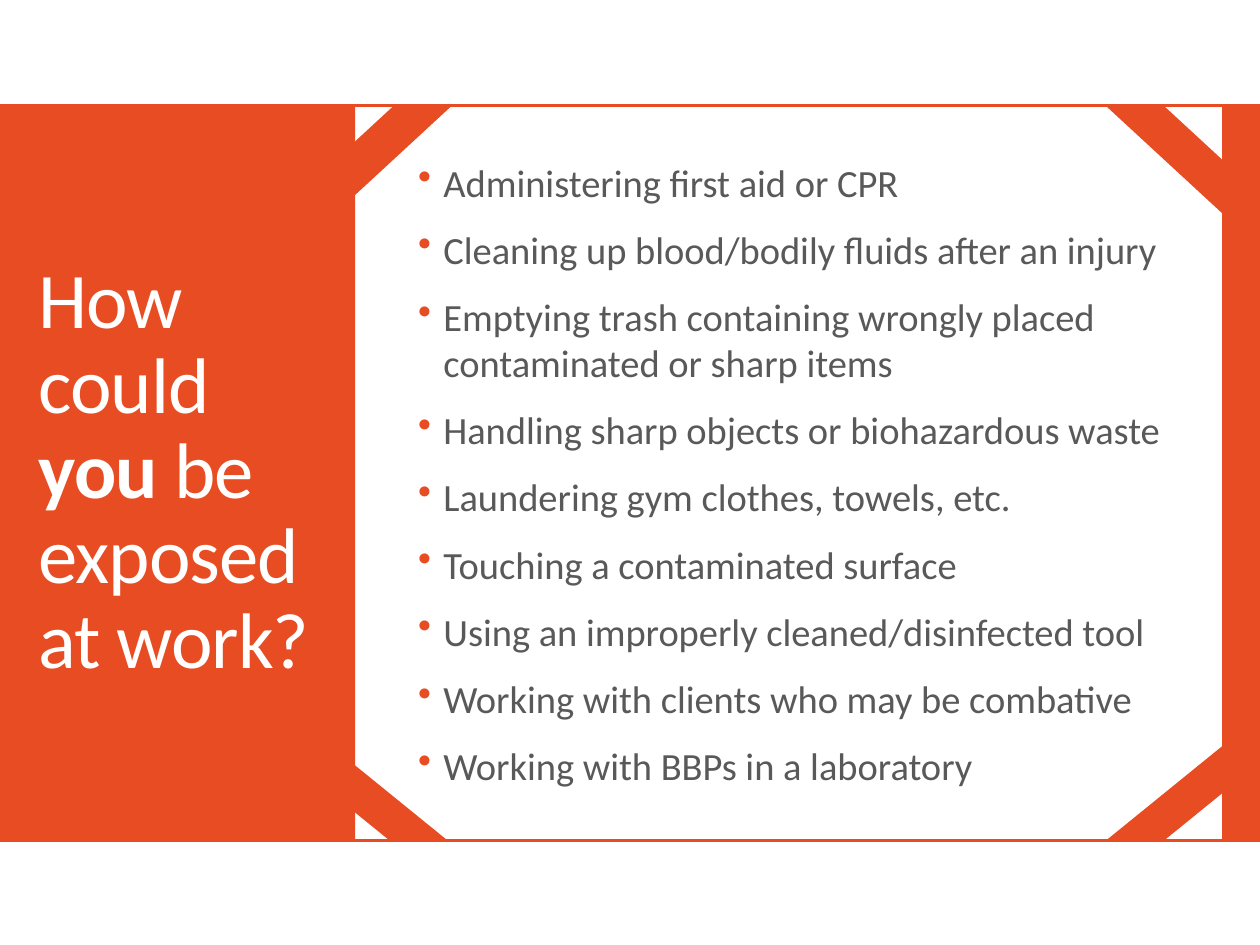
from dataclasses import dataclass

from lxml import etree
from pptx import Presentation, util as u
from pptx.dml import color
from pptx.enum import shapes, text
from pptx.oxml import ns


@dataclass(frozen=True)
class Theme:
    """Colours, font and type sizes of the slide."""
    accent: color.RGBColor = color.RGBColor(0xE8, 0x4C, 0x22)
    body: color.RGBColor = color.RGBColor(0x59, 0x59, 0x59)
    light: color.RGBColor = color.RGBColor(0xFF, 0xFF, 0xFF)
    font: str = "Calibri"
    title_size: u.Pt = u.Pt(45)
    body_size: u.Pt = u.Pt(22)
    rule_width: u.Pt = u.Pt(1.75)


THEME = Theme()
TITLE_RUNS = [("How could ", False), ("you", True), (" be exposed at work?", False)]
EXPOSURES = [
    "Administering first aid or CPR",
    "Cleaning up blood/bodily fluids after an injury",
    "Emptying trash containing wrongly placed contaminated or sharp items",
    "Handling sharp objects or biohazardous waste",
    "Laundering gym clothes, towels, etc.",
    "Touching a contaminated surface",
    "Using an improperly cleaned/disinfected tool",
    "Working with clients who may be combative",
    "Working with BBPs in a laboratory",
]


def lengths(*values):
    """Turn centimetre values into lengths."""
    return [u.Cm(value) for value in values]


def apply_format(target, values):
    """Set each attribute named in a dict of format values."""
    for name, value in values.items():
        setattr(target, name, value)


def add_solid(slide, kind, box):
    """Add a preset shape in the accent colour without outline or shadow."""
    shape = slide.shapes.add_shape(kind, *lengths(*box))
    shape.shadow.inherit = False
    shape.fill.solid()
    shape.fill.fore_color.rgb = THEME.accent
    shape.line.fill.background()
    return shape


def add_text_frame(slide, box):
    """Add a wrapping, vertically centred text box and return its frame."""
    frame = slide.shapes.add_textbox(*lengths(*box)).text_frame
    apply_format(frame, {"word_wrap": True,
                         "vertical_anchor": text.MSO_ANCHOR.MIDDLE})
    return frame


def add_run(paragraph, words, size, rgb, bold=False):
    """Add a run of text in the theme font."""
    run = paragraph.add_run()
    run.text = words
    apply_format(run.font, {"name": THEME.font, "size": size, "bold": bold})
    run.font.color.rgb = rgb
    return run


def add_bullet(paragraph):
    """Give a paragraph a hanging bullet in the accent colour."""
    properties = paragraph._p.get_or_add_pPr()
    properties.set("marL", str(u.Cm(0.51)))
    properties.set("indent", str(-u.Cm(0.51)))
    bullet_color = etree.SubElement(properties, ns.qn("a:buClr"))
    etree.SubElement(bullet_color, ns.qn("a:srgbClr"), val=str(THEME.accent))
    etree.SubElement(properties, ns.qn("a:buChar"), char="•")


def add_side_panels(slide, box):
    """Fill the left and right ends of the band."""
    left, top, width, height = box
    for offset, panel_width in ((0, 7.16), (width - 0.76, 0.76)):
        add_solid(slide, shapes.MSO_SHAPE.RECTANGLE,
                  (left + offset, top, panel_width, height))


def add_title(slide, box):
    """Write the question in the left panel."""
    left, top, width, height = box
    frame = add_text_frame(slide, (left + 0.53, top + 1.02, 6.15, height - 2.04))
    paragraph = frame.paragraphs[0]
    paragraph.line_spacing = 0.9
    for words, bold in TITLE_RUNS:
        run = add_run(paragraph, words, THEME.title_size, THEME.light, bold)
        run._r.get_or_add_rPr().set("spc", "-60")


def add_exposures(slide, box):
    """List the ways of being exposed."""
    left, top, width, height = box
    frame = add_text_frame(slide, (left + 8.18, top + 1.24, 17.17, 12.37))
    for index, exposure in enumerate(EXPOSURES):
        paragraph = frame.add_paragraph() if index else frame.paragraphs[0]
        paragraph.space_before = u.Pt(12)
        add_bullet(paragraph)
        add_run(paragraph, exposure, THEME.body_size, THEME.body)


def add_corner_stripes(slide, box):
    """Cut the four corners of the list area with diagonal stripes."""
    left, top, width, height = box
    stripe_width, upper, lower = 2.34, 2.16, 1.9
    bottom = height - lower
    right = width - 0.76 - stripe_width
    corners = [
        (6.76, 0.02, upper, 0, False),
        (6.68, bottom, lower, 180, True),
        (right, bottom, lower, 180, False),
        (right, 0.02, upper, 0, True),
    ]
    for x, y, stripe_height, rotation, flipped in corners:
        stripe = add_solid(slide, shapes.MSO_SHAPE.DIAGONAL_STRIPE,
                           (left + x, top + y, stripe_width, stripe_height))
        stripe.rotation = rotation
        if flipped:
            stripe._element.spPr.xfrm.set("flipH", "1")


def add_rules(slide, box):
    """Draw the lines along the top and bottom of the band."""
    left, top, width, height = box
    for y in (top, top + height):
        rule = slide.shapes.add_connector(
            shapes.MSO_CONNECTOR.STRAIGHT, *lengths(left, y, left + width, y))
        rule.line.color.rgb = THEME.accent
        rule.line.width = THEME.rule_width
        etree.SubElement(rule._element.spPr, ns.qn("a:effectLst"))


def main():
    """Build the slide and save it."""
    presentation = Presentation()
    apply_format(presentation, {"slide_width": u.Cm(25.4),
                                "slide_height": u.Cm(19.05)})
    slide = presentation.slides.add_slide(presentation.slide_layouts[6])
    band = (0, 2.12, 25.4, 14.82)
    for add_region in (add_side_panels, add_title, add_exposures,
                       add_corner_stripes, add_rules):
        add_region(slide, band)
    presentation.save("out.pptx")


if __name__ == "__main__":
    main()
